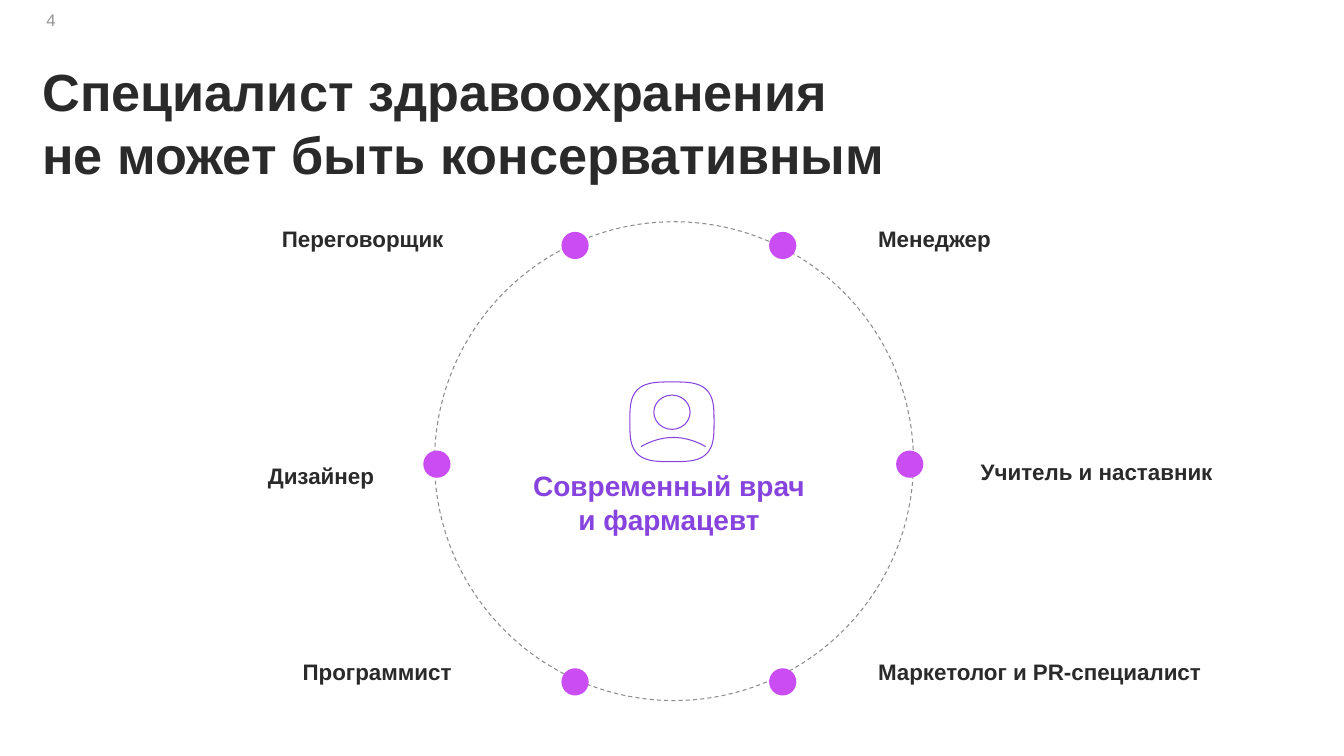
from math import cos, sin, pi, copysign
from pptx import Presentation
from pptx.dml.color import RGBColor
from pptx.enum.dml import MSO_LINE
from pptx.enum.shapes import MSO_SHAPE
from pptx.enum.text import PP_ALIGN
from pptx.util import Inches, Pt

WIDTH, HEIGHT = Inches(13.33), Inches(7.5)
COL, ROW = WIDTH / 100, HEIGHT / 100
INK = RGBColor(0x2A, 0x2A, 0x2A)
GREY = RGBColor(0x8C, 0x8C, 0x8C)
PALE = RGBColor(0x94, 0x94, 0x94)
PURPLE = RGBColor(0x87, 0x43, 0xDD)
PINK = RGBColor(0xC9, 0x4D, 0xF3)
LEFT, RIGHT, CENTER = PP_ALIGN.LEFT, PP_ALIGN.RIGHT, PP_ALIGN.CENTER
SPAN = 27.5
ROLES = [
    ("Переговорщик", 42.79, 32.47, 33, 28.8, RIGHT),
    ("Менеджер", 58.24, 32.47, 65.33, 28.8, LEFT),
    ("Дизайнер", 32.51, 61.4, 27.83, 60.2, RIGHT),
    ("Учитель и наставник", 67.69, 61.4, 72.97, 59.6, LEFT),
    ("Программист", 42.79, 90.2, 33.6, 86.13, RIGHT),
    ("Маркетолог и PR-специалист", 58.24, 90.2, 65.33, 86.13, LEFT),
]


def add_text(slide, text, area, size, color, bold=True, align=LEFT, pad=0.07):
    col, row, wide, high = area
    box = slide.shapes.add_textbox(
        round(col * COL), round(row * ROW), round(wide * COL), round(high * ROW))
    frame = box.text_frame
    frame.word_wrap = True
    frame.margin_left = frame.margin_right = 0
    frame.margin_top = frame.margin_bottom = Inches(pad)
    line = frame.paragraphs[0]
    line.text = text
    line.alignment = align
    line.font.name = "Arial"
    line.font.size = Pt(size)
    line.font.bold = bold
    line.font.color.rgb = color


def paint(shape, fill=None, edge=None):
    shape.shadow.inherit = False
    if fill is None:
        shape.fill.background()
    else:
        shape.fill.solid()
        shape.fill.fore_color.rgb = fill
    if edge is None:
        shape.line.fill.background()
    else:
        shape.line.color.rgb = edge
        shape.line.width = Pt(0.75)


def add_oval(slide, col, row, wide, high, fill=None, edge=None):
    oval = slide.shapes.add_shape(
        MSO_SHAPE.OVAL, round(col * COL - wide / 2), round(row * ROW - high / 2),
        wide, high)
    paint(oval, fill, edge)
    return oval


def add_curve(slide, points, closed):
    spots = [(col * COL, row * ROW) for col, row in points]
    builder = slide.shapes.build_freeform(*spots[0])
    builder.add_line_segments(spots[1:], close=closed)
    paint(builder.convert_to_shape(), edge=PURPLE)


def bulge(value):
    return copysign(abs(value) ** 0.6, value)


def add_person(slide):
    turns = [2 * pi * step / 120 for step in range(120)]
    add_curve(slide, [(50 + 3.13 * bulge(cos(turn)), 55.8 + 5.27 * bulge(sin(turn)))
                      for turn in turns], True)
    steps = [step / 20 for step in range(-20, 21)]
    add_curve(slide, [(50.1 + 2.4 * step, 57.87 + 1.2 * step ** 2)
                      for step in steps], False)
    add_oval(slide, 50, 54.53, Inches(0.36), Inches(0.34), edge=PURPLE)


def add_role(slide, name, col, row, edge, top, align):
    start = edge - SPAN if align == RIGHT else edge
    add_text(slide, name, (start, top, SPAN, 5.33), 16, INK, align=align)
    add_oval(slide, col, row, Inches(0.27), Inches(0.27), fill=PINK)


def main():
    deck = Presentation()
    deck.slide_width, deck.slide_height = WIDTH, HEIGHT
    slide = deck.slides.add_slide(deck.slide_layouts[6])
    ring = add_oval(slide, 50.15, 61, Inches(4.75), Inches(4.75), edge=GREY)
    ring.line.dash_style = MSO_LINE.DASH
    add_text(slide, "Современный врач \vи фармацевт ", (38.86, 61.07, 22.43, 11.73),
             20, PURPLE, align=CENTER)
    for role in ROLES:
        add_role(slide, *role)
    add_text(slide, "4", (3.45, 1.33, 4.73, 2.67), 12, PALE, bold=False, pad=0)
    add_person(slide)
    add_text(slide, "Специалист здравоохранения\vне может быть консервативным",
             (3.15, 7.87, 75.77, 16.8), 37.3, INK, pad=0)
    deck.save("out.pptx")


if __name__ == "__main__":
    main()
